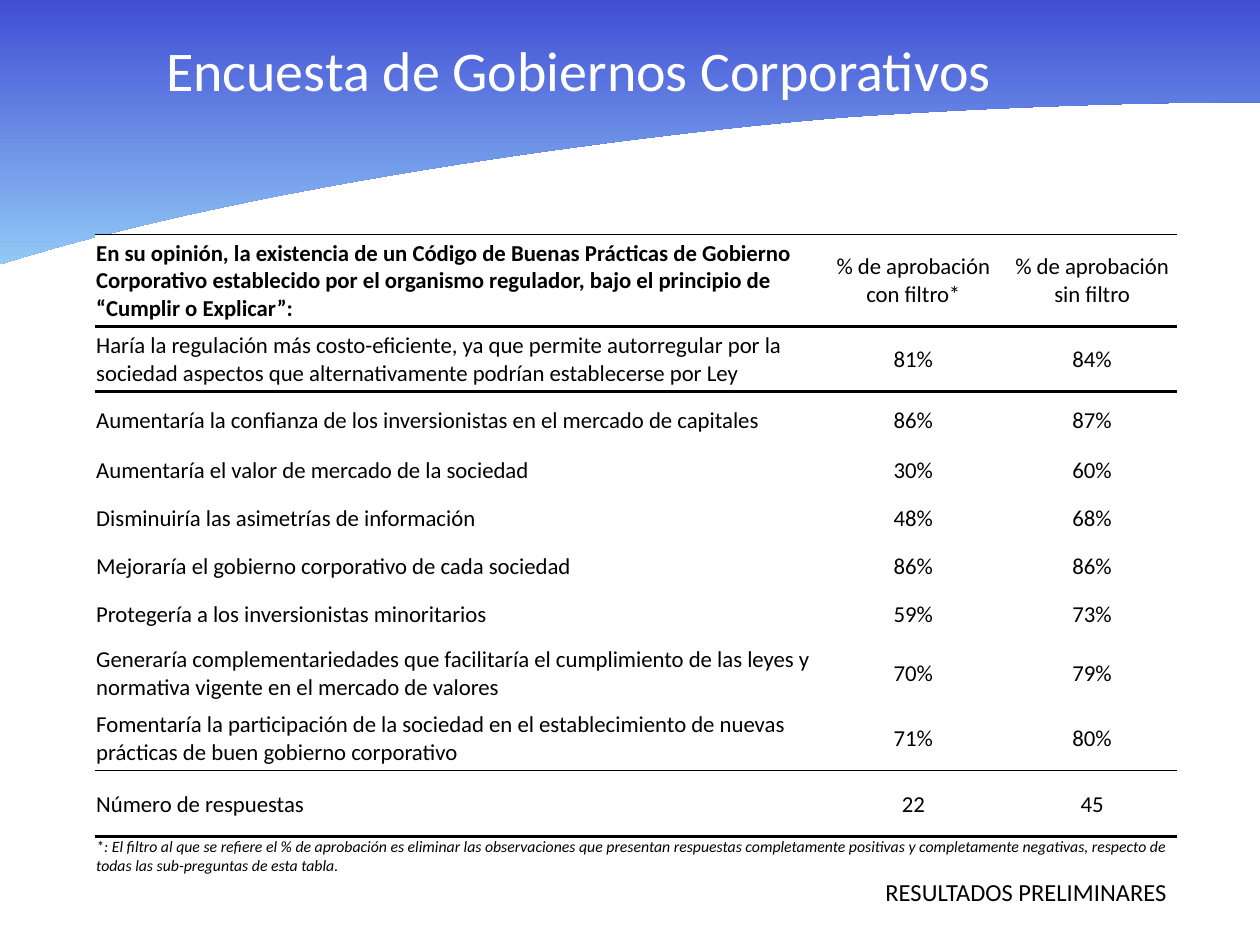
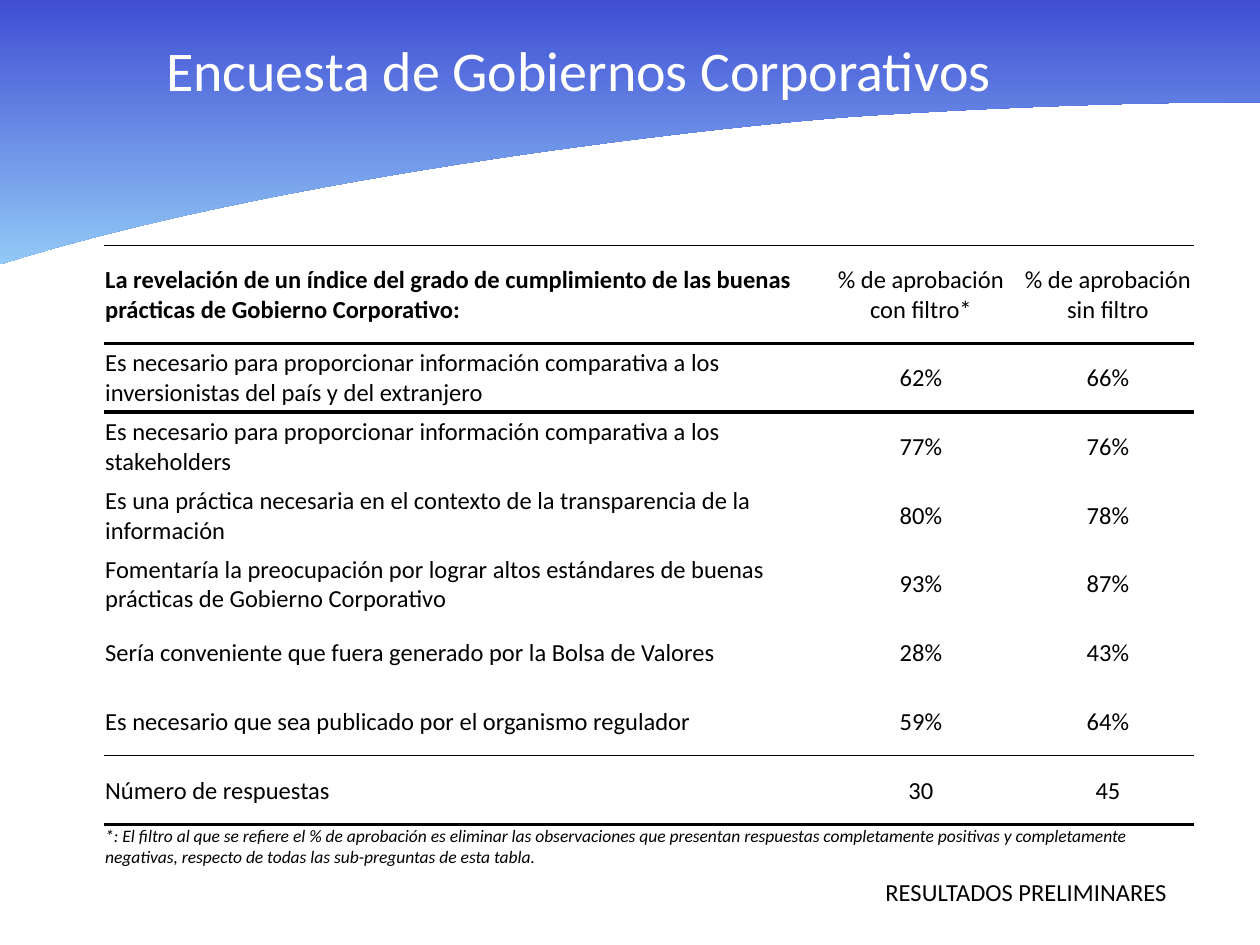
import pptx
import pptx.dml.color
import pptx.enum.text
import pptx.oxml
import pptx.oxml.ns
import pptx.util
from pptx.util import Cm

# Content
TITLE = "Encuesta de Gobiernos Corporativos"
STATUS = "RESULTADOS PRELIMINARES"
COLUMN_HEADS = ("% de aprobación con filtro*", "% de aprobación sin filtro")
FOOTNOTE = (
    "*: El filtro al que se refiere el % de aprobación es eliminar las observaciones "
    "que presentan respuestas completamente positivas y completamente negativas, "
    "respecto de todas las sub-preguntas de esta tabla."
)
SURVEYS = [
    {
        "question": "En su opinión, la existencia de un Código de Buenas Prácticas de Gobierno "
                    "Corporativo establecido por el organismo regulador, bajo el principio de "
                    "“Cumplir o Explicar”:",
        "answers": [
            ("Haría la regulación más costo-eficiente, ya que permite autorregular por la "
             "sociedad aspectos que alternativamente podrían establecerse por Ley", "81%", "84%"),
            ("Aumentaría la confianza de los inversionistas en el mercado de capitales",
             "86%", "87%"),
            ("Aumentaría el valor de mercado de la sociedad", "30%", "60%"),
            ("Disminuiría las asimetrías de información", "48%", "68%"),
            ("Mejoraría el gobierno corporativo de cada sociedad", "86%", "86%"),
            ("Protegería a los inversionistas minoritarios", "59%", "73%"),
            ("Generaría complementariedades que facilitaría el cumplimiento de las leyes y "
             "normativa vigente en el mercado de valores", "70%", "79%"),
            ("Fomentaría la participación de la sociedad en el establecimiento de nuevas "
             "prácticas de buen gobierno corporativo", "71%", "80%"),
        ],
        "responses": ("Número de respuestas", "22", "45"),
        "corner": (1.91, 4.72),
        "columns": (14.61, 3.78, 3.43),
        "rows": (1.86, 1.32, 1.12, 0.91, 1.02, 0.91, 1.04, 1.32, 1.32, 1.32, 0.91),
        "size": 13,
        "note_size": 9,
        "title_width": 21.2,
    },
    {
        "question": "La revelación de un índice del grado de cumplimiento de las buenas "
                    "prácticas de Gobierno Corporativo:",
        "answers": [
            ("Es necesario para proporcionar información comparativa a los inversionistas "
             "del país y del extranjero", "62%", "66%"),
            ("Es necesario para proporcionar información comparativa a los stakeholders",
             "77%", "76%"),
            ("Es una práctica necesaria en el contexto de la transparencia de la información",
             "80%", "78%"),
            ("Fomentaría la preocupación por lograr altos estándares de buenas prácticas "
             "de Gobierno Corporativo", "93%", "87%"),
            ("Sería conveniente que fuera generado por la Bolsa de Valores", "28%", "43%"),
            ("Es necesario que sea publicado por el organismo regulador", "59%", "64%"),
        ],
        "responses": ("Número de respuestas", "30", "45"),
        "corner": (2.09, 4.95),
        "columns": (14.43, 4.09, 3.45),
        "rows": (1.97,) + (1.385,) * 7 + (0.91,),
        "size": 14,
        "note_size": 10,
        "title_width": 20.04,
    },
]

# Shared look
FONT = "Calibri"
WHITE = pptx.dml.color.RGBColor(0xFF, 0xFF, 0xFF)
BLACK = pptx.dml.color.RGBColor(0x00, 0x00, 0x00)
BAND_TOP = pptx.dml.color.RGBColor(0x40, 0x4E, 0xD4)
BAND_BOTTOM = pptx.dml.color.RGBColor(0x92, 0xC9, 0xF6)
THIN, THICK = 0.5, 2
PLAIN_TABLE = "{2D5ABB26-0587-4C30-8999-92F81FD0307C}"
SLIDE_WIDTH, SLIDE_HEIGHT = 25.4, 19.05
# Lower edge of the band: two Bézier curves, in cm
BAND_CURVES = [
    ((0, 5.33), (5.87, 3.48), (14.86, 2.51), (17.37, 2.34)),
    ((17.37, 2.34), (20.93, 2.11), (23.67, 2.06), (25.4, 2.06)),
]
CURVE_STEPS = 30


def set_font(paragraph, size, color, bold=False, italic=False):
    font = paragraph.font
    font.name, font.size = FONT, pptx.util.Pt(size)
    font.bold, font.italic = bold, italic
    font.color.rgb = color


def curve_point(curve, t):
    weights = ((1 - t) ** 3, 3 * t * (1 - t) ** 2, 3 * t ** 2 * (1 - t), t ** 3)
    return tuple(Cm(sum(w * point[axis] for w, point in zip(weights, curve)))
                 for axis in (0, 1))


def add_band(slide):
    edge = [curve_point(curve, step / CURVE_STEPS)
            for curve in BAND_CURVES for step in range(CURVE_STEPS + 1)]
    outline = slide.shapes.build_freeform(0, 0)
    outline.add_line_segments(edge + [(Cm(SLIDE_WIDTH), 0)], close=True)
    band = outline.convert_to_shape()
    band.shadow.inherit = False
    band.line.fill.background()
    band.fill.gradient()
    band.fill.gradient_angle = 270
    for stop, color in zip(band.fill.gradient_stops, (BAND_TOP, BAND_BOTTOM)):
        stop.color.rgb = color


def add_label(slide, text, box, size, color, wrap):
    frame = slide.shapes.add_textbox(*map(Cm, box)).text_frame
    frame.word_wrap = wrap
    frame.auto_size = pptx.enum.text.MSO_AUTO_SIZE.SHAPE_TO_FIT_TEXT
    label = frame.paragraphs[0]
    label.text = text
    set_font(label, size, color)
    return label


def add_rule(cell, side, points):
    cell._tc.get_or_add_tcPr().append(pptx.oxml.parse_xml(
        f'<a:ln{side} {pptx.oxml.ns.nsdecls("a")} w="{int(points * 12700)}">'
        f'<a:solidFill><a:srgbClr val="{BLACK}"/></a:solidFill></a:ln{side}>'))


def fill_cell(cell, text, size, rules, centred=False, bold=False, italic=False):
    for side, points in zip("TB", rules):
        if points:
            add_rule(cell, side, points)
    cell.fill.solid()
    cell.fill.fore_color.rgb = WHITE
    cell.margin_left = cell.margin_right = cell.margin_top = Cm(0.03)
    cell.margin_bottom = 0
    if not italic:
        cell.vertical_anchor = pptx.enum.text.MSO_ANCHOR.MIDDLE
    paragraph = cell.text_frame.paragraphs[0]
    paragraph.text = text
    if centred:
        paragraph.alignment = pptx.enum.text.PP_ALIGN.CENTER
    set_font(paragraph, size, BLACK, bold, italic)


def add_results(slide, survey):
    lines = [(survey["question"], *COLUMN_HEADS), *survey["answers"], survey["responses"]]
    note_row = len(lines)
    left, top = survey["corner"]
    columns, rows = survey["columns"], survey["rows"]
    results = slide.shapes.add_table(
        len(rows), len(columns), Cm(left), Cm(top), Cm(sum(columns)), Cm(sum(rows))).table
    results._tbl.tblPr.find(pptx.oxml.ns.qn("a:tableStyleId")).text = PLAIN_TABLE
    results.first_row = results.horz_banding = False
    for column, width in zip(results.columns, columns):
        column.width = Cm(width)
    for row, height in zip(results.rows, rows):
        row.height = Cm(height)

    # Rules by edge: edge n lies above row n
    edges = {0: THIN, 1: THICK, note_row - 1: THIN, note_row: THICK}
    for r, line in enumerate(lines):
        for c, text in enumerate(line):
            fill_cell(results.cell(r, c), text, survey["size"],
                      (edges.get(r), edges.get(r + 1)), centred=c > 0, bold=r == c == 0)

    # Footnote across the table
    note = results.cell(note_row, 0)
    note.merge(results.cell(note_row, len(columns) - 1))
    fill_cell(note, FOOTNOTE, survey["note_size"], (THICK, None), italic=True)


def main():
    deck = pptx.Presentation()
    deck.slide_width, deck.slide_height = Cm(SLIDE_WIDTH), Cm(SLIDE_HEIGHT)
    for survey in SURVEYS:
        slide = deck.slides.add_slide(deck.slide_layouts[6])
        add_band(slide)
        title = add_label(slide, TITLE, (3.1, 0.74, survey["title_width"], 1.5),
                          32, WHITE, True)
        title.line_spacing = 0.9
        add_results(slide, survey)
        add_label(slide, STATUS, (17.6, 17.55, 6.3, 0.86), 14, BLACK, False)
    deck.save("out.pptx")


if __name__ == "__main__":
    main()
